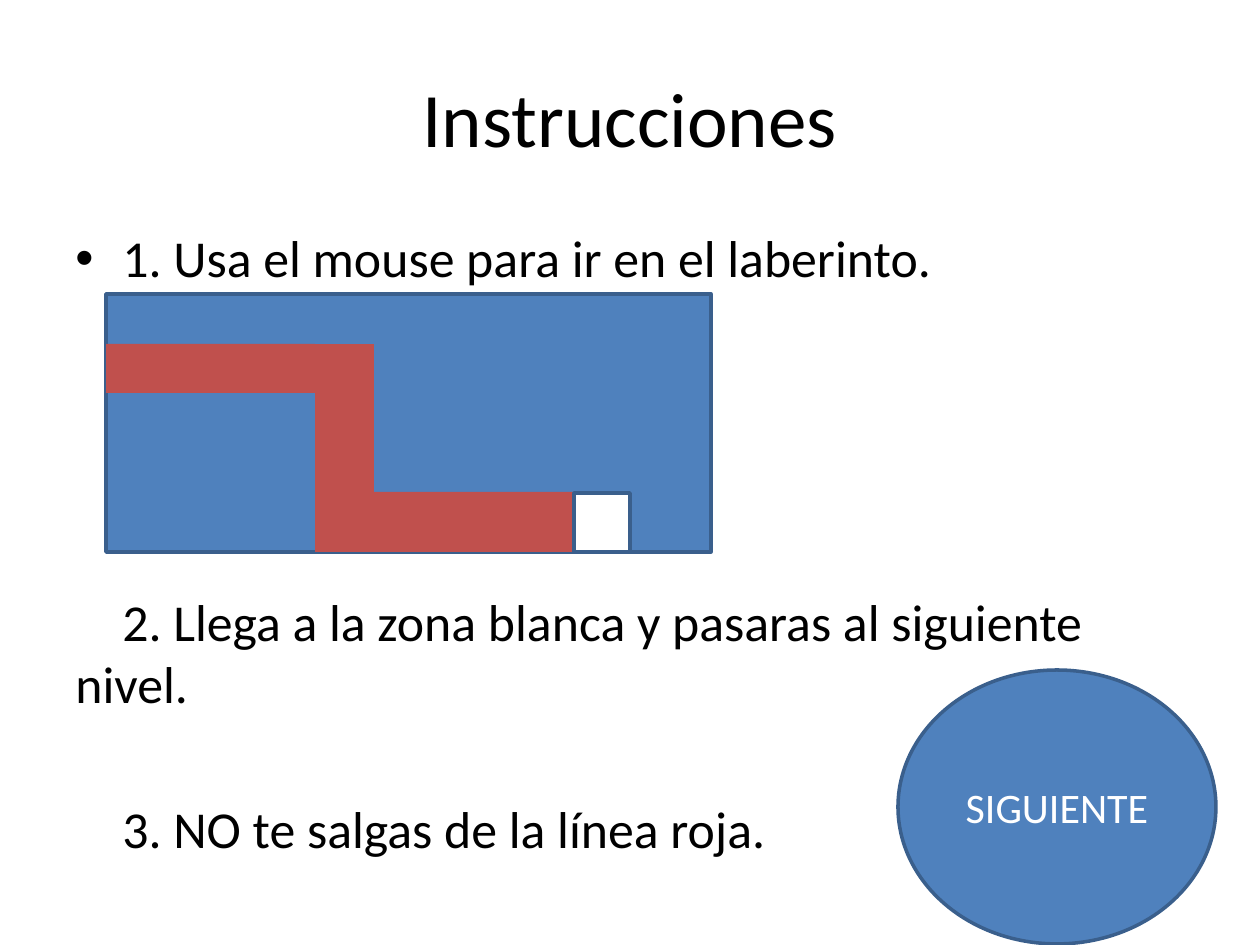
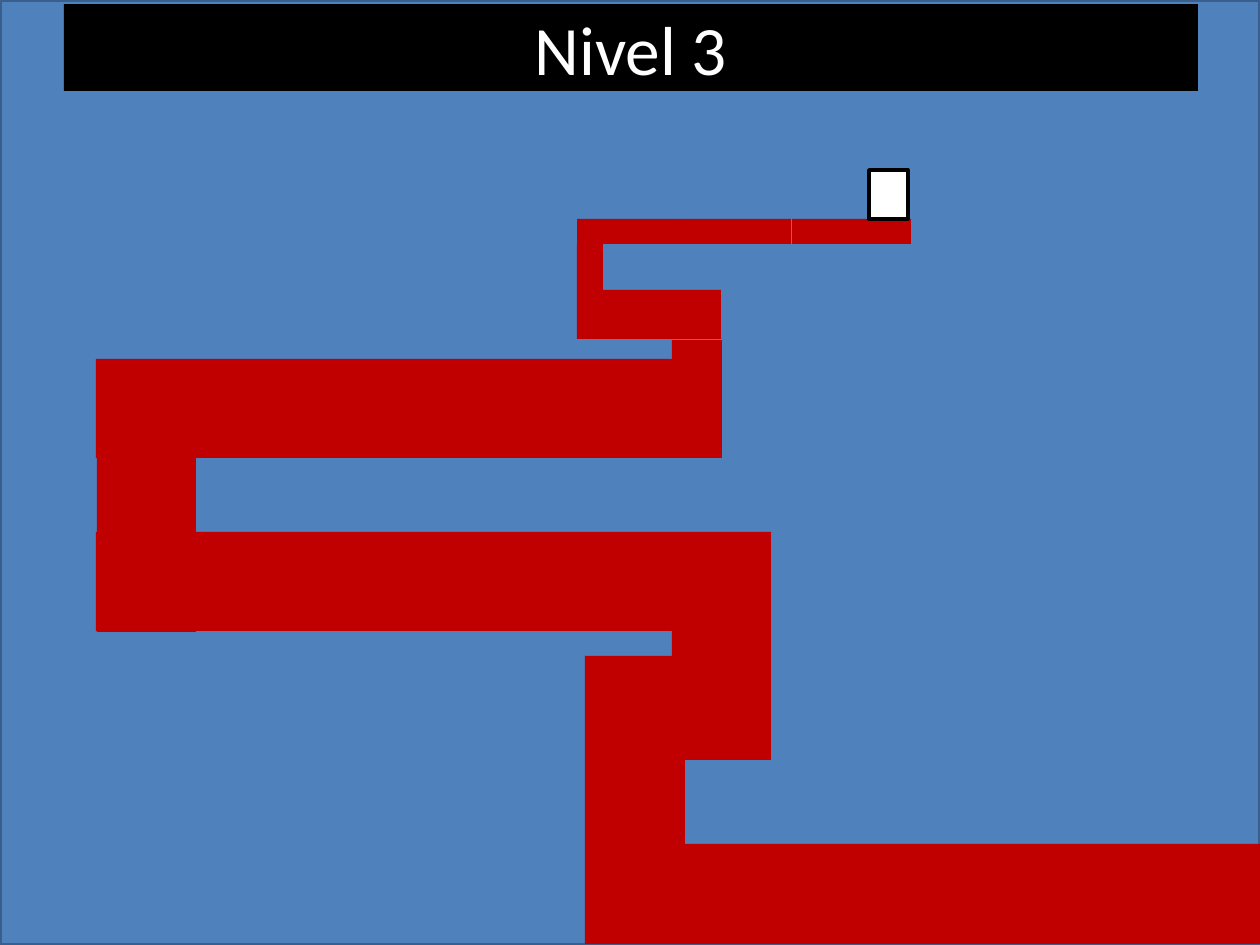
from pptx import Presentation
from pptx.dml.color import RGBColor
from pptx.enum.shapes import MSO_SHAPE
from pptx.enum.text import MSO_ANCHOR, MSO_AUTO_SIZE, PP_ALIGN
from pptx.oxml import parse_xml
from pptx.oxml.ns import nsdecls
from pptx.util import Emu, Pt

RECTANGLE, OVAL = MSO_SHAPE.RECTANGLE, MSO_SHAPE.OVAL
MIDDLE, TOP = MSO_ANCHOR.MIDDLE, MSO_ANCHOR.TOP
CENTER, LEFT = PP_ALIGN.CENTER, PP_ALIGN.LEFT
NO_AUTOFIT = MSO_AUTO_SIZE.NONE

PX_PER_INCH = 126
PAGE_WIDTH, PAGE_HEIGHT = 1260, 945
TITLE_ONLY = 5
FONT = "Calibri"
BLACK, WHITE = "000000", "FFFFFF"
BLUE, DARK_BLUE = "4F81BD", "3A5F8C"
SOFT_RED, DEEP_RED = "C0504D", "C00000"
STEP_INDENT = 47

# Boxes are left, top, width, height in px.
SAMPLE_MAZE = (106, 294, 605, 258)
SAMPLE_PATH = [(106, 344, 209, 49), (315, 344, 59, 208), (365, 492, 208, 60)]
SAMPLE_GOAL = (574, 493, 56, 59)

LEVEL_PATH = [
    (685, 844, 575, 100),
    (585, 656, 100, 288),
    (672, 532, 99, 228),
    (96, 532, 576, 99),
    (97, 453, 99, 179),
    (96, 359, 576, 99),
    (672, 340, 50, 118),
    (602, 290, 119, 49),
    (577, 244, 26, 95),
    (577, 219, 96, 25),
    (672, 219, 119, 25),
    (792, 219, 119, 25),
]
LEVEL_GOAL = (869, 170, 39, 49)

# Each step: wording, space before in px, bulleted or not.
STEPS = [
    ("1. Usa el mouse para ir en el laberinto.", 10, True),
    ("2. Llega a la zona blanca y pasaras al siguiente nivel.", 301, False),
    ("3. NO te salgas de la línea roja.", 83, False),
]


def px(length):
    return Emu(round(length * 914400 / PX_PER_INCH))


def color(value):
    return RGBColor.from_string(value)


def write(para, text, size, ink=BLACK, align=CENTER):
    para.alignment = align
    span = para.add_run()
    span.text = text
    span.font.name = FONT
    span.font.size = Pt(size)
    span.font.color.rgb = color(ink)


def prepare_frame(frame, anchor):
    frame.word_wrap = True
    frame.auto_size = NO_AUTOFIT
    frame.vertical_anchor = anchor


def add_block(page, box, fill, line=None, kind=RECTANGLE):
    block = page.shapes.add_shape(kind, *map(px, box))
    block.shadow.inherit = False
    block.fill.solid()
    block.fill.fore_color.rgb = color(fill)
    if line:
        block.line.color.rgb = color(line)
        block.line.width = Pt(2)
    else:
        block.line.fill.background()
    return block


def add_path(page, segments, fill):
    for segment in segments:
        add_block(page, segment, fill)


def set_title(page, text, box, size, ink=BLACK, fill=None):
    title = page.shapes.title
    title.left, title.top, title.width, title.height = map(px, box)
    if fill:
        title.fill.solid()
        title.fill.fore_color.rgb = color(fill)
    prepare_frame(title.text_frame, MIDDLE)
    write(title.text_frame.paragraphs[0], text, size, ink)


def indent_step(para, bulleted):
    """Hang the text after a bullet, or indent only the first line."""
    properties = para._p.get_or_add_pPr()
    indent = px(STEP_INDENT)
    properties.set("marL", str(indent if bulleted else 0))
    properties.set("indent", str(-indent if bulleted else indent))
    if bulleted:
        properties.append(parse_xml(f'<a:buFont {nsdecls("a")} typeface="Arial"/>'))
        properties.append(parse_xml(f'<a:buChar {nsdecls("a")} char="•"/>'))


def add_steps(page, box):
    frame = page.shapes.add_textbox(*map(px, box)).text_frame
    prepare_frame(frame, TOP)
    for number, (text, gap, bulleted) in enumerate(STEPS):
        para = frame.add_paragraph() if number else frame.paragraphs[0]
        write(para, text, 29.6, align=LEFT)
        para.space_before = px(gap)
        indent_step(para, bulleted)


def add_next_button(page, box):
    button = add_block(page, box, BLUE, DARK_BLUE, OVAL)
    prepare_frame(button.text_frame, MIDDLE)
    write(button.text_frame.paragraphs[0], "SIGUIENTE", 24, WHITE)


def build_instructions(deck):
    page = deck.slides.add_slide(deck.slide_layouts[TITLE_ONLY])
    set_title(page, "Instrucciones", (63, 38, 1134, 157), 44)
    add_steps(page, (63, 220, 1134, 624))
    add_block(page, SAMPLE_MAZE, BLUE, DARK_BLUE)
    add_path(page, SAMPLE_PATH, SOFT_RED)
    add_block(page, SAMPLE_GOAL, WHITE, DARK_BLUE)
    add_next_button(page, (898, 670, 318, 274))


def build_level(deck):
    page = deck.slides.add_slide(deck.slide_layouts[TITLE_ONLY])
    backdrop = add_block(page, (0, 0, PAGE_WIDTH, PAGE_HEIGHT), BLUE, DARK_BLUE)
    page.shapes.title.element.addprevious(backdrop.element)
    set_title(page, "Nivel 3", (64, 4, 1134, 87), 39.6, WHITE, BLACK)
    add_path(page, LEVEL_PATH, DEEP_RED)
    add_block(page, LEVEL_GOAL, WHITE, BLACK)


def main():
    deck = Presentation()
    deck.slide_width, deck.slide_height = px(PAGE_WIDTH), px(PAGE_HEIGHT)
    build_instructions(deck)
    build_level(deck)
    deck.save("out.pptx")


if __name__ == "__main__":
    main()
